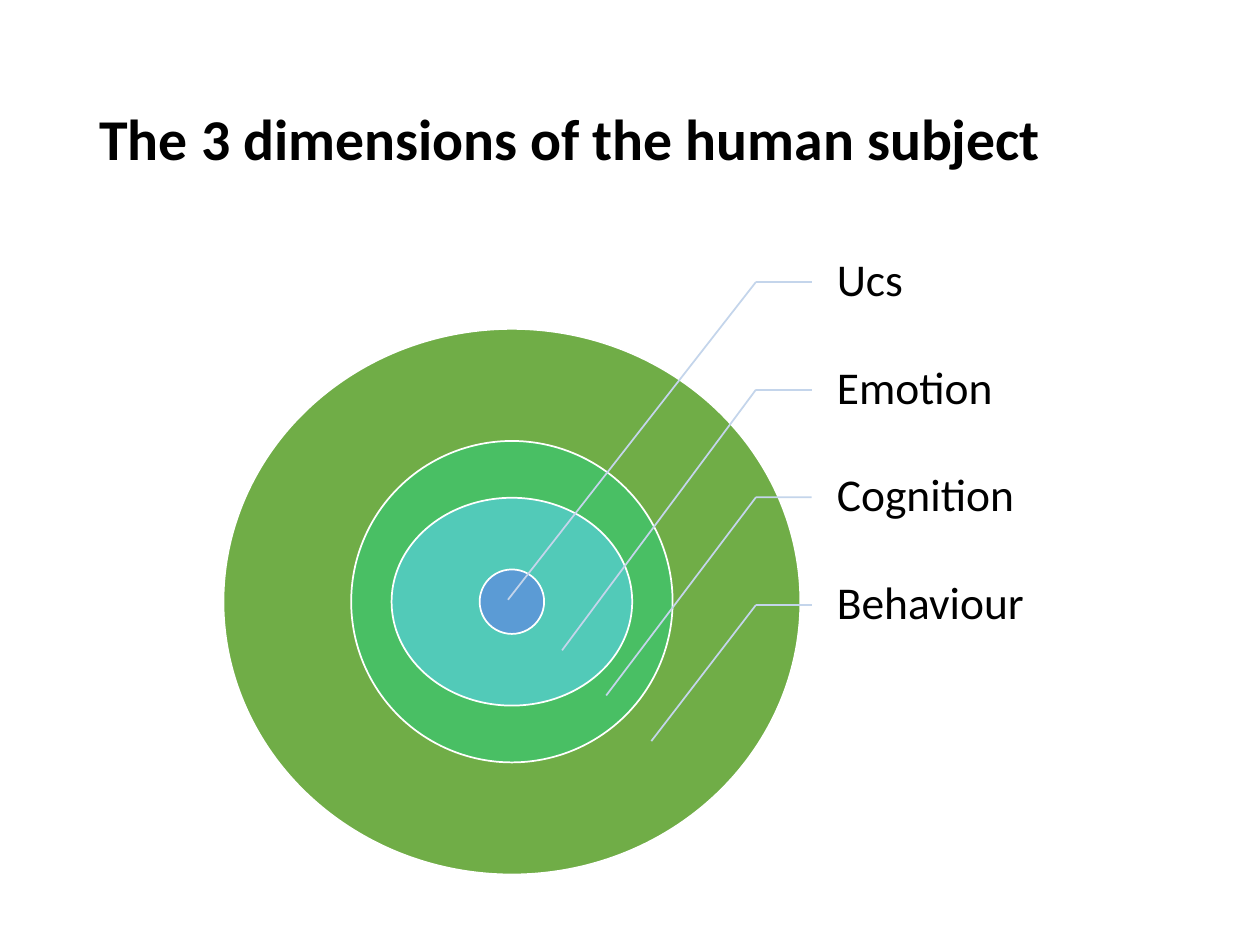
import pptx
import pptx.dml.color
import pptx.enum.shapes
import pptx.enum.text
import pptx.oxml
import pptx.util
from pptx.util import Cm

RINGS = [
    (11.63, 11, "70AD47"),
    (6.48, 6.48, "49BF64"),
    (4.85, 4.19, "52CAB8"),
    (1.3, 1.3, "5B9BD5"),
]
LABELS = [
    ("Ucs", 5.74, 7.49),
    ("Emotion", 6.83, 8.51),
    ("Cognition", 7.72, 9.42),
    ("Behaviour", 8.63, 10.34),
]


def rgb(value):
    """Return the colour of a hex string."""
    return pptx.dml.color.RGBColor.from_string(value)


def write(tf, text, size, bold=False):
    """Write one left-aligned line, centred vertically in its frame."""
    tf.word_wrap = True
    tf.auto_size = pptx.enum.text.MSO_AUTO_SIZE.NONE
    tf.vertical_anchor = pptx.enum.text.MSO_ANCHOR.MIDDLE
    p = tf.paragraphs[0]
    p.alignment = pptx.enum.text.PP_ALIGN.LEFT
    p.line_spacing = 0.9
    r = p.add_run()
    r.text = text
    r.font.name = "Calibri"
    r.font.size = pptx.util.Pt(size)
    r.font.bold = bold
    r.font.color.rgb = rgb("000000")


def add_line(s, x1, y1, x2, y2):
    """Add a thin leader segment without shadow and return it."""
    line = s.shapes.add_connector(
        pptx.enum.shapes.MSO_CONNECTOR.STRAIGHT, Cm(x1), Cm(y1), Cm(x2), Cm(y2))
    line.line.color.rgb = rgb("C4D5EB")
    line.line.width = pptx.util.Pt(1)
    line._element.spPr.append(pptx.oxml.parse_xml(
        '<a:effectLst xmlns:a="http://schemas.openxmlformats.org/drawingml/2006/main"/>'))
    return line


def add_title(s, left, top, width, height):
    """Place and fill the title placeholder."""
    sp = s.shapes.title
    sp.left, sp.top, sp.width, sp.height = Cm(left), Cm(top), Cm(width), Cm(height)
    write(sp.text_frame, "The 3 dimensions of the human subject", 33, True)


def add_rings(s, cx, cy):
    """Draw the nested ellipses around one centre."""
    for w, h, color in RINGS:
        sp = s.shapes.add_shape(
            pptx.enum.shapes.MSO_SHAPE.OVAL,
            Cm(cx - w / 2), Cm(cy - h / 2), Cm(w), Cm(h))
        sp.shadow.inherit = False
        sp.fill.solid()
        sp.fill.fore_color.rgb = rgb(color)
        sp.line.color.rgb = rgb("FFFFFF")
        sp.line.width = pptx.util.Pt(1)


def add_target(s, left, top, width):
    """Draw the rings with their labels and bent leader lines."""
    add_rings(s, left + 5.82, top + 7.53)
    label_width, pitch = 4.52, 2.17
    label_x = left + width - label_width
    bend_x = label_x - 1.12
    for i, (text, x, y) in enumerate(LABELS):
        label_y = top + i * pitch
        mid_y = label_y + pitch / 2
        sp = s.shapes.add_textbox(Cm(label_x), Cm(label_y), Cm(label_width), Cm(pitch))
        tf = sp.text_frame
        tf.margin_left = Cm(0.51)
        tf.margin_right = tf.margin_top = tf.margin_bottom = Cm(0.1)
        write(tf, text, 26)
        add_line(s, bend_x, mid_y, label_x, mid_y).end_connect(sp, 1)
        add_line(s, bend_x, mid_y, left + x, top + y)


def main():
    """Build and save the slide."""
    prs = pptx.Presentation()
    prs.slide_width, prs.slide_height = Cm(25.4), Cm(19.05)
    s = prs.slides.add_slide(prs.slide_layouts[5])
    add_title(s, 1.75, 1.02, 21.9, 3.68)
    add_target(s, 4.5, 4.6, 16.38)
    prs.save("out.pptx")


if __name__ == "__main__":
    main()
